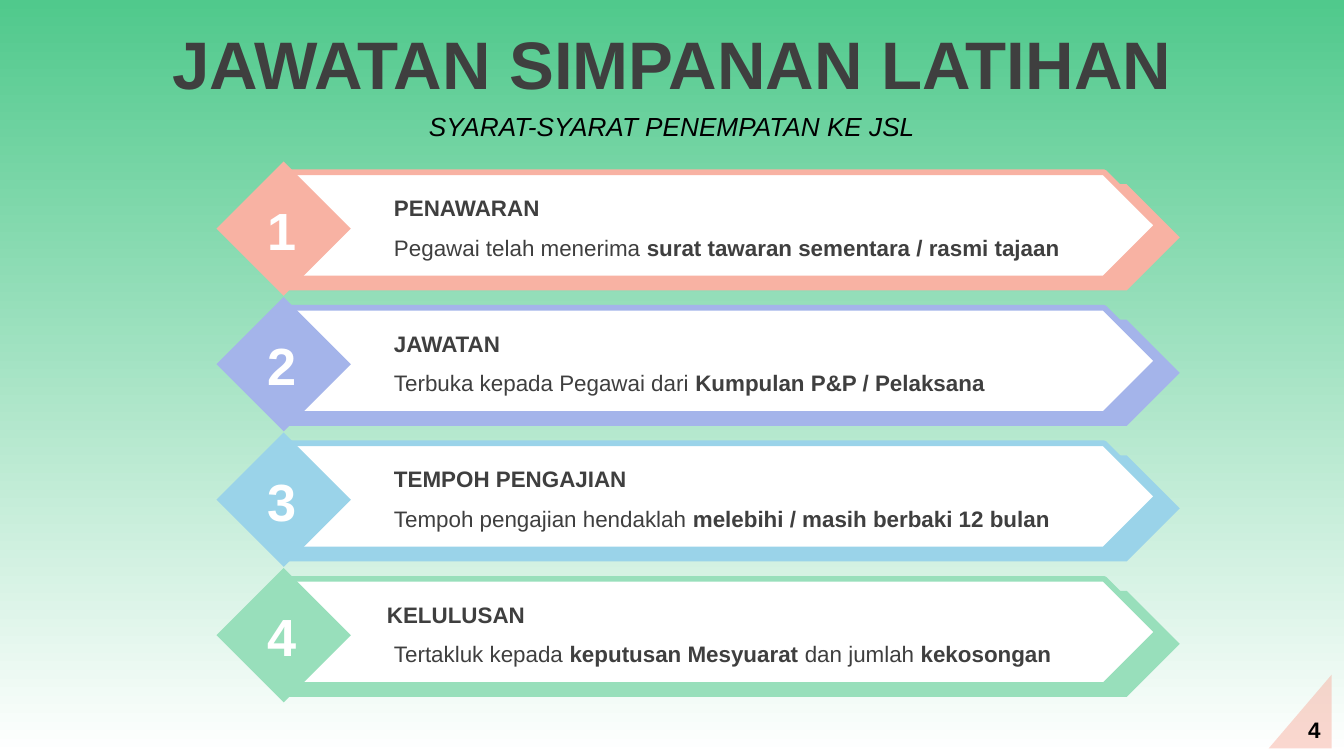
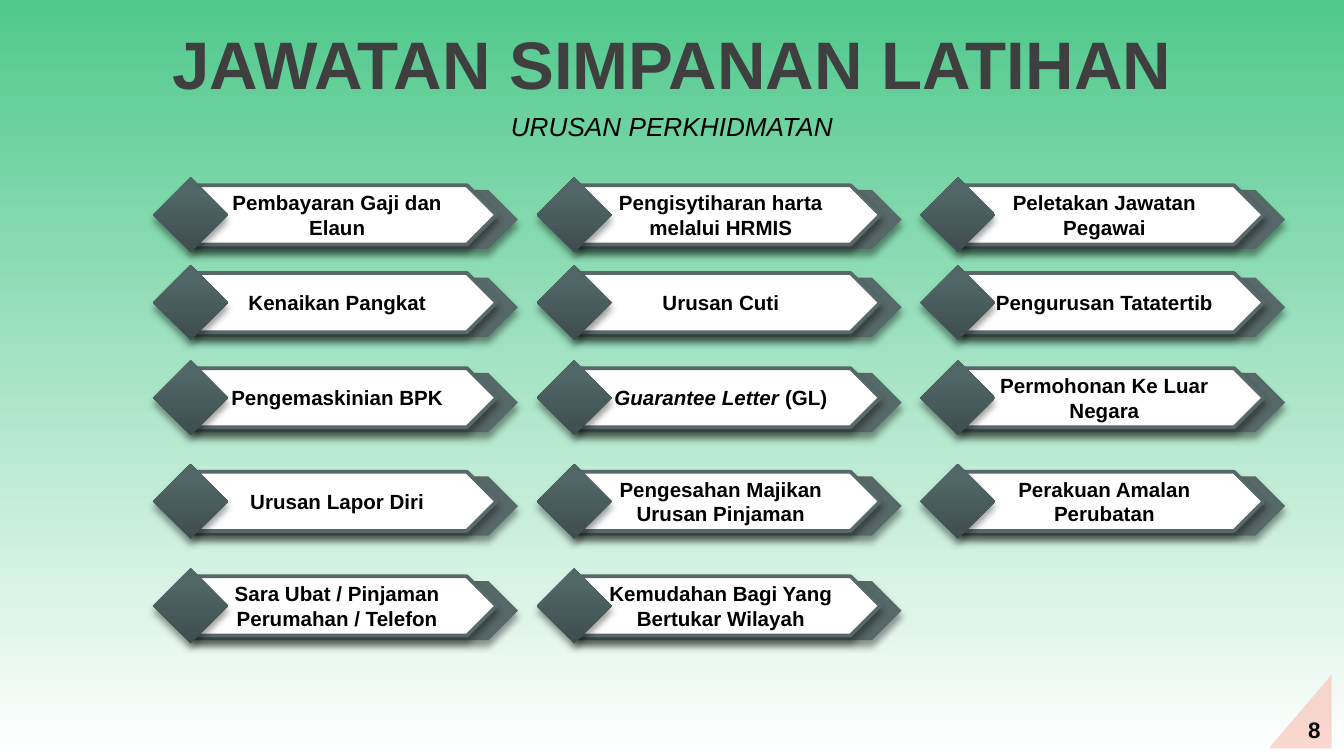
from itertools import product

from lxml.etree import SubElement
from pptx import Presentation
from pptx.dml.color import RGBColor
from pptx.enum.shapes import MSO_SHAPE
from pptx.enum.text import MSO_ANCHOR, PP_ALIGN
from pptx.oxml.ns import qn
from pptx.util import Pt

FONT = "Arial"
BLACK = RGBColor(0x00, 0x00, 0x00)
WHITE = RGBColor(0xFF, 0xFF, 0xFF)
DARK = RGBColor(0x3F, 0x3F, 0x3F)
GREEN = RGBColor(0x50, 0xC9, 0x8C)
CORAL = RGBColor(0xF8, 0xB2, 0xA3)
LILAC = RGBColor(0xA4, 0xB4, 0xEA)
SKY = RGBColor(0x9A, 0xD3, 0xE9)
MINT = RGBColor(0x98, 0xDF, 0xBB)
SLATE = RGBColor(0x57, 0x68, 0x68)
DEEP = RGBColor(0x3E, 0x4D, 0x4D)
STEEL = RGBColor(0x51, 0x66, 0x66)


class Deck:
    """Holds the shared style and the current slide."""

    def __init__(self):
        self.prs = Presentation()
        self.prs.slide_width, self.prs.slide_height = Pt(720), Pt(405)
        self.slide = None

    def page(self, subtitle, number):
        self.slide = self.prs.slides.add_slide(self.prs.slide_layouts[6])
        self.blend(self.slide.background.fill, GREEN, WHITE, 270)
        self.text(0, 10.8, 720, 45.4, "JAWATAN SIMPANAN LATIHAN", 36, DARK,
                  bold=True, align=PP_ALIGN.CENTER, anchor=MSO_ANCHOR.MIDDLE)
        self.text(0, 55.4, 720, 22.3, [(subtitle, "i")], 14, BLACK,
                  align=PP_ALIGN.CENTER)
        self.corner(number)

    def blend(self, fill, start, end, angle, stop=1):
        fill.gradient()
        fill.gradient_angle = angle
        first, last = fill.gradient_stops
        first.color.rgb, last.color.rgb = start, end
        last.position = stop

    def label(self, frame, parts, size, color, bold, align):
        """Parts is a string, or (text, style) pairs with style b or i."""
        para = frame.paragraphs[0]
        para.alignment = align
        font = para.font
        font.name, font.size, font.bold = FONT, Pt(size), bold
        font.color.rgb = color
        for words, style in [(parts, "")] if isinstance(parts, str) else parts:
            run = para.add_run()
            run.text = words
            if "b" in style:
                run.font.bold = True
            if "i" in style:
                run.font.italic = True

    def text(self, x, y, w, h, parts, size, color, bold=False,
             align=PP_ALIGN.LEFT, anchor=MSO_ANCHOR.TOP):
        box = self.slide.shapes.add_textbox(Pt(x), Pt(y), Pt(w), Pt(h))
        frame = box.text_frame
        frame.word_wrap = True
        frame.vertical_anchor = anchor
        self.label(frame, parts, size, color, bold, align)

    def shape(self, home, kind, x, y, w, h, color, line=None, width=0,
              shade=False):
        item = home.add_shape(kind, Pt(x), Pt(y), Pt(w), Pt(h))
        item.fill.solid()
        item.fill.fore_color.rgb = color
        if line is None:
            item.line.fill.background()
        else:
            item.line.color.rgb = line
            item.line.width = Pt(width)
        item.shadow.inherit = False
        if shade:
            self.shade(item)
        return item

    def shade(self, item):
        effect = item._element.spPr.find(qn("a:effectLst"))
        outer = SubElement(effect, qn("a:outerShdw"), blurRad=str(Pt(4)),
                           dist=str(Pt(3)), dir="5400000", rotWithShape="0")
        color = SubElement(outer, qn("a:srgbClr"), val=str(BLACK))
        SubElement(color, qn("a:alpha"), val="40000")

    def corner(self, number):
        item = self.shape(self.slide.shapes, MSO_SHAPE.RIGHT_TRIANGLE,
                          679.7, 361.4, 33.8, 39.6, CORAL)
        props = item._element.spPr
        props.get_or_add_xfrm().set("flipH", "1")
        color = props.find(qn("a:solidFill")).find(qn("a:srgbClr"))
        SubElement(color, qn("a:alpha"), val="51000")
        self.label(item.text_frame, number, 12, BLACK, True, PP_ALIGN.CENTER)

    def ribbon(self, x, y, side, dx, back, front, high, color, width,
               shade=False):
        """Two stacked arrows with a diamond; back and front are (dy, width)."""
        home = self.slide.shapes.add_group_shape().shapes
        plate = MSO_SHAPE.PENTAGON
        self.shape(home, plate, x + dx, y + back[0], back[1], high, color,
                   shade=shade)
        face = self.shape(home, plate, x + dx, y + front[0], front[1], high,
                          WHITE, color, width, shade)
        gem = self.shape(home, MSO_SHAPE.DIAMOND, x, y, side, side, color,
                         shade=shade)
        return face, gem

    def term(self, x, y, number, color, head, body, shift):
        self.ribbon(x, y, 72, 38, (12.2, 478), (5.8, 466), 56.9, color, 3)
        self.text(x + 19.4, y + 15.8, 31.7, 41, f"{number} ", 28, WHITE,
                  bold=True, align=PP_ALIGN.CENTER, anchor=MSO_ANCHOR.MIDDLE)
        self.text(x + 88 + shift, y + 14, 374.4, 21.6, head, 12, DARK,
                  bold=True)
        self.text(x + 88, y + 35.2, 374.4, 21.6, body, 12, DARK)

    def task(self, x, y, parts):
        face, gem = self.ribbon(x, y, 40.3, 21.3, (6.8, 174.2), (4.3, 162.7),
                                31.7, SLATE, 2, True)
        self.blend(gem.fill, DEEP, STEEL, 90, 0.8)
        self.label(face.text_frame, parts, 11, BLACK, True, PP_ALIGN.CENTER)


# Colour, heading, body and heading shift of each condition
TERMS = [
    (CORAL, "PENAWARAN", [("Pegawai telah menerima ", ""),
                          ("surat tawaran sementara / rasmi tajaan", "b")], 0),
    (LILAC, "JAWATAN", [("Terbuka kepada Pegawai dari ", ""),
                        ("Kumpulan P&P / Pelaksana", "b")], 0),
    (SKY, "TEMPOH PENGAJIAN", [("Tempoh pengajian hendaklah ", ""),
                               ("melebihi / masih berbaki 12 bulan", "b")], 0),
    (MINT, "KELULUSAN", [("Tertakluk kepada ", ""),
                         ("keputusan Mesyuarat ", "b"),
                         ("dan jumlah ", ""), ("kekosongan", "b")], -3.8),
]

# Service tasks, row by row
TASKS = [
    "Pembayaran Gaji dan Elaun", "Pengisytiharan harta melalui HRMIS",
    "Peletakan Jawatan Pegawai",
    "Kenaikan Pangkat", "Urusan Cuti", "Pengurusan Tatatertib",
    "Pengemaskinian BPK", [("Guarantee Letter ", "i"), ("(GL)", "")],
    "Permohonan Ke Luar Negara",
    "Urusan Lapor Diri", "Pengesahan Majikan Urusan Pinjaman",
    "Perakuan Amalan Perubatan",
    "Sara Ubat / Pinjaman Perumahan / Telefon",
    "Kemudahan Bagi Yang Bertukar Wilayah",
]
ROWS = [95, 142, 193, 248.5, 304.5]
COLS = [82 + 205.5 * col for col in range(3)]


def main():
    deck = Deck()

    # Conditions for placement
    deck.page("SYARAT-SYARAT PENEMPATAN KE JSL", "4")
    for row, (color, head, body, shift) in enumerate(TERMS):
        deck.term(116, 86.5 + 72.6 * row, row + 1, color, head, body, shift)

    # Service matters
    deck.page("URUSAN PERKHIDMATAN", "8")
    for (y, x), parts in zip(product(ROWS, COLS), TASKS):
        deck.task(x, y, parts)

    deck.prs.save("out.pptx")


if __name__ == "__main__":
    main()
